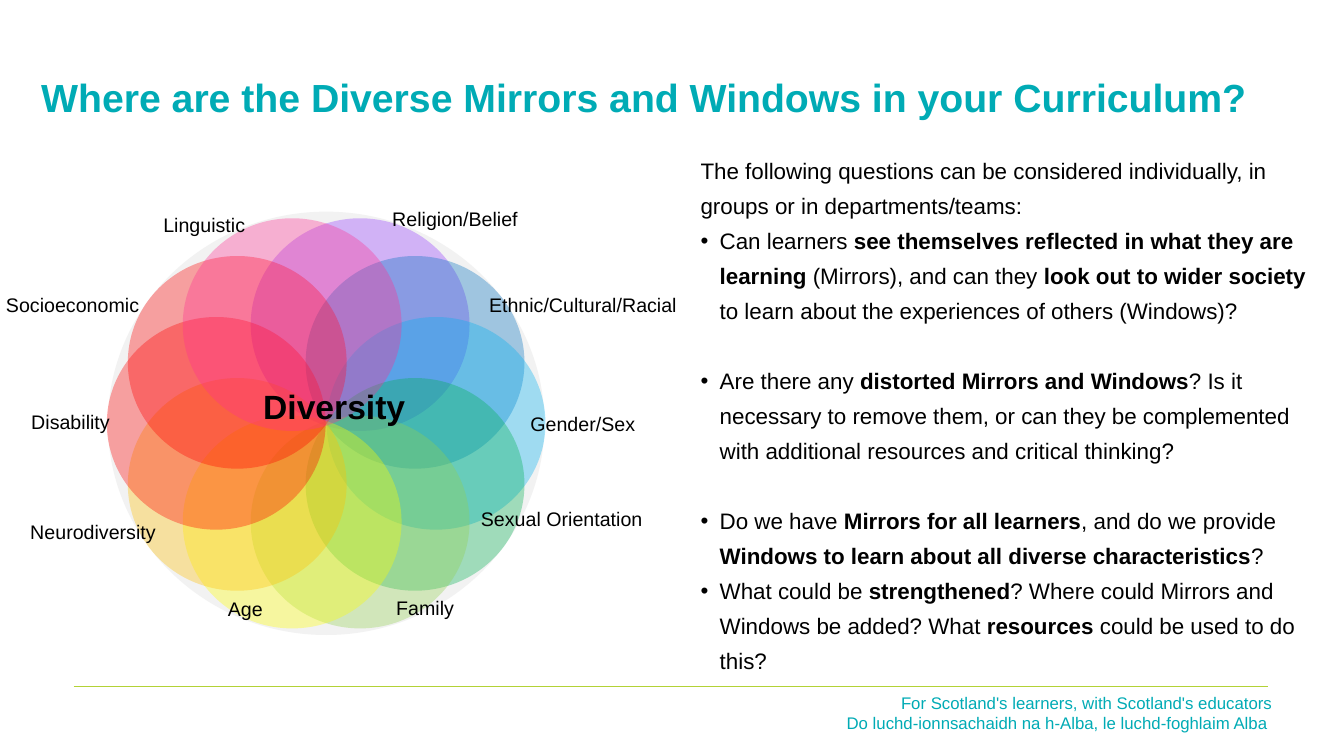
from math import cos, radians, sin

from lxml import etree
from pptx import Presentation
from pptx.dml.color import RGBColor
from pptx.enum.shapes import MSO_CONNECTOR, MSO_SHAPE
from pptx.enum.text import MSO_ANCHOR, PP_ALIGN
from pptx.oxml.ns import qn
from pptx.util import Inches, Pt

ELLIPSE = MSO_SHAPE.OVAL
STRAIGHT = MSO_CONNECTOR.STRAIGHT
LEFT, CENTER, RIGHT = PP_ALIGN.LEFT, PP_ALIGN.CENTER, PP_ALIGN.RIGHT
TOP, MIDDLE = MSO_ANCHOR.TOP, MSO_ANCHOR.MIDDLE

TEAL, LIME, BLACK, PALE = "00ABB5", "B3D236", "000000", "F2F2F2"
LINE_PITCH = 25

# Clockwise, starting at the upper right
PETAL_COLORS = ["9437FF", "0070C0", "00B0F0", "00B050", "92D050",
                "FFFF00", "FFC000", "FF0000", "FF0000", "FF2F92"]
WHEEL_CENTER = (3.235, 4.2)
ORBIT = (1.09, 1.03)
PETAL_SIZE = (2.17, 2.11)

WHEEL_LABELS = [
    ("Linguistic", 1.62, 2.11, 1.27),
    ("Religion/Belief", 3.89, 2.05, 1.68),
    ("Gender/Sex", 5.26, 4.09, 1.59),
    ("Disability", 0.31, 4.07, 1.59),
    ("Age", 2.26, 5.92, 0.57),
    ("Neurodiversity", 0.3, 5.16, 1.88),
    ("Socioeconomic", 0.06, 2.91, 1.63),
    ("Family", 3.93, 5.91, 0.86),
    ("Sexual Orientation", 4.77, 5.03, 2.34),
    ("Ethnic/Cultural/Racial", 4.85, 2.91, 2.15),
]

INTRO = ("The following questions can be considered individually, "
         "in groups or in departments/teams:")
# Runs alternate between regular and bold; the number is blank lines after
QUESTIONS = [
    (["Can learners ", "see themselves reflected in what they are learning",
      " (Mirrors), and can they ", "look out to wider society",
      " to learn about the experiences of others (Windows)?"], 1),
    (["Are there any ", "distorted Mirrors and Windows",
      "? Is it necessary to remove them, or can they be complemented "
      "with additional resources and critical thinking?"], 1),
    (["Do we have ", "Mirrors for all learners", ", and do we provide ",
      "Windows to learn about all diverse characteristics", "?"], 0),
    (["What could be ", "strengthened",
      "? Where could Mirrors and Windows be added? What ", "resources ",
      "could be used to do this?"], 0),
]


def rgb(color):
    return RGBColor.from_string(color)


class SlideBuilder:
    font = "Arial"

    def __init__(self, page):
        self.shapes = page.shapes

    def rule(self, left, right, y, color, width):
        line = self.shapes.add_connector(
            STRAIGHT, Inches(left), Inches(y), Inches(right), Inches(y))
        line.line.color.rgb = rgb(color)
        line.line.width = Pt(width)
        etree.SubElement(line._element.spPr, qn("a:effectLst"))

    def ellipse(self, center, size, color, opacity=100):
        (x, y), (width, height) = center, size
        shape = self.shapes.add_shape(
            ELLIPSE, Inches(x - width / 2), Inches(y - height / 2),
            Inches(width), Inches(height))
        shape.shadow.inherit = False
        shape.line.fill.background()
        shape.fill.solid()
        shape.fill.fore_color.rgb = rgb(color)
        if opacity < 100:
            tint = shape._element.spPr.find(f".//{qn('a:srgbClr')}")
            etree.SubElement(tint, qn("a:alpha"), val=str(opacity * 1000))

    def frame(self, left, top, width, height, inset=True, anchor=TOP):
        """Add a wrapping text box and return its text frame."""
        box = self.shapes.add_textbox(
            Inches(left), Inches(top), Inches(width), Inches(height))
        frame = box.text_frame
        frame.word_wrap = True
        frame.vertical_anchor = anchor
        if not inset:
            frame.margin_left = frame.margin_right = 0
            frame.margin_top = frame.margin_bottom = 0
        return frame

    def span(self, para, text, size, color=BLACK, bold=False):
        span = para.add_run()
        span.text = text
        span.font.name = self.font
        span.font.size = Pt(size)
        span.font.bold = bold
        span.font.color.rgb = rgb(color)

    def text(self, lines, place, size, color=BLACK, bold=False, align=LEFT,
             inset=True, anchor=TOP):
        """Add a box with one evenly styled paragraph for each line."""
        frame = self.frame(*place, inset=inset, anchor=anchor)
        for number, line in enumerate(lines):
            para = frame.add_paragraph() if number else frame.paragraphs[0]
            para.alignment = align
            self.span(para, line, size, color, bold)

    def bullet(self, para, indent):
        properties = para._p.get_or_add_pPr()
        properties.set("marL", str(Inches(indent)))
        properties.set("indent", str(-Inches(indent)))
        etree.SubElement(properties, qn("a:buFont"), typeface=self.font)
        etree.SubElement(properties, qn("a:buChar"), char="•")

    def questions(self, intro, items, place, size):
        frame = self.frame(*place)
        first = frame.paragraphs[0]
        first.line_spacing = Pt(LINE_PITCH)
        self.span(first, intro, size)
        for spans, blank_lines in items:
            para = frame.add_paragraph()
            para.line_spacing = Pt(LINE_PITCH)
            para.space_after = Pt(LINE_PITCH * blank_lines)
            self.bullet(para, 0.19)
            for number, text in enumerate(spans):
                self.span(para, text, size, bold=number % 2 == 1)

    def wheel(self):
        self.ellipse(WHEEL_CENTER, (4.33, 4.2), PALE)
        step = 360 / len(PETAL_COLORS)
        for number, color in enumerate(PETAL_COLORS):
            angle = radians((number - 2) * step)
            center = (WHEEL_CENTER[0] + ORBIT[0] * cos(angle),
                      WHEEL_CENTER[1] + ORBIT[1] * sin(angle))
            self.ellipse(center, PETAL_SIZE, color, opacity=34)
        for label, left, top, width in WHEEL_LABELS:
            self.text([label], (left, top, width, 0.3), 14, inset=False)
        self.text(["Diversity"], (2.43, 3.83, 1.77, 0.4), 24, bold=True,
                  align=CENTER, inset=False)


def main():
    deck = Presentation()
    deck.slide_width, deck.slide_height = Inches(13.33), Inches(7.5)
    builder = SlideBuilder(deck.slides.add_slide(deck.slide_layouts[6]))

    builder.rule(0.73, 12.58, 6.81, LIME, 0.75)
    builder.text(["For Scotland's learners, with Scotland's educators",
                  "Do luchd-ionnsachaidh na h-Alba, le luchd-foghlaim Alba "],
                 (8.23, 6.82, 4.49, 0.5), 12, TEAL, align=RIGHT)
    builder.text(
        ["Where are the Diverse Mirrors and Windows in your Curriculum?"],
        (0.31, 0.68, 12.42, 0.57), 28, TEAL, bold=True, anchor=MIDDLE)
    builder.wheel()
    builder.questions(INTRO, QUESTIONS, (6.85, 1.43, 6.24, 5.32), 16)

    deck.save("out.pptx")


if __name__ == "__main__":
    main()
